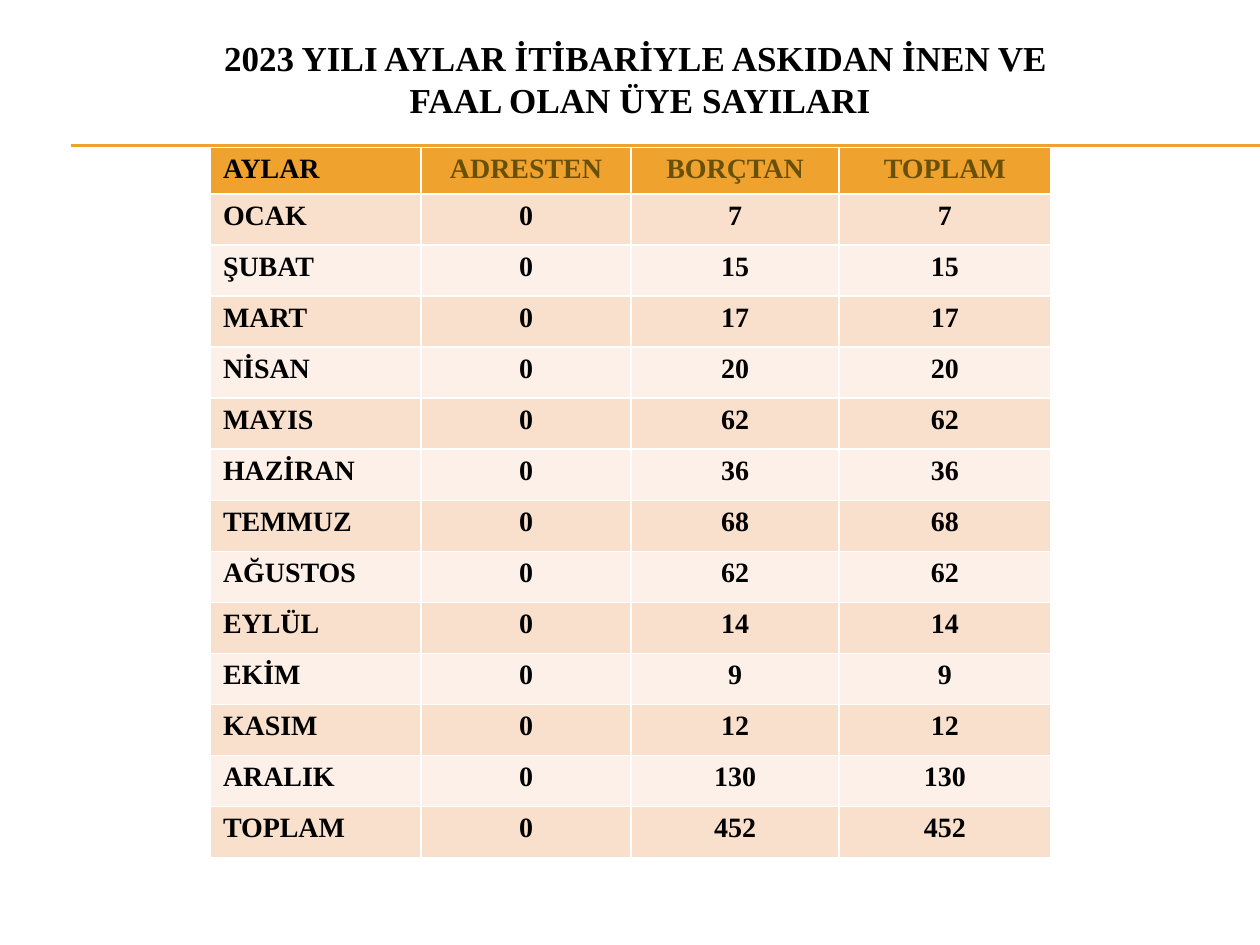
"""Build the 2023 slide of members returned to active status, month by month."""
import copy

import pptx
import pptx.dml.color
import pptx.enum.shapes
import pptx.enum.text
import pptx.oxml
import pptx.util

Inches = pptx.util.Inches
ALIGN = pptx.enum.text.PP_ALIGN
COLORS = {
    "accent": "F0A22E",
    "heading": "695008",
    "text": "000000",
    "dark_band": "F9E0CD",
    "light_band": "FCF0E8",
}


def rgb(name):
    return pptx.dml.color.RGBColor.from_string(COLORS[name])


def write(tf, text, size=16, color="text", align=ALIGN.CENTER):
    p = tf.paragraphs[0]
    p.text = text
    p.alignment = align
    for r in p.runs:
        r.font.name = "Times New Roman"
        r.font.size = pptx.util.Pt(size)
        r.font.bold = True
        r.font.color.rgb = rgb(color)
    for br in p._p.br_lst if hasattr(p._p, "br_lst") else p._p.findall(pptx.oxml.ns.qn("a:br")):
        br.append(copy.deepcopy(p.runs[0]._r.rPr))


prs = pptx.Presentation()
prs.slide_width, prs.slide_height = Inches(10), Inches(7.5)
s = prs.slides.add_slide(prs.slide_layouts[5])

for y in (1.15, 1.16):
    line = s.shapes.add_connector(
        pptx.enum.shapes.MSO_CONNECTOR.STRAIGHT,
        Inches(0.56), Inches(y), Inches(10), Inches(y))
    line.line.color.rgb = rgb("accent")
    line.line.width = pptx.util.Pt(0.75)
    line._element.spPr.append(pptx.oxml.parse_xml(
        '<a:effectLst xmlns:a="http://schemas.openxmlformats.org/drawingml/2006/main"/>'))

title = s.shapes.title
title.left, title.top = Inches(0.33), Inches(0.16)
title.width, title.height = Inches(9.5), Inches(0.92)
title.text_frame.vertical_anchor = pptx.enum.text.MSO_ANCHOR.MIDDLE
write(title.text_frame,
      "2023 YILI AYLAR İTİBARİYLE ASKIDAN İNEN VE \vFAAL OLAN ÜYE SAYILARI", size=20)

headings = ["AYLAR", "ADRESTEN", "BORÇTAN", "TOPLAM"]
members = [
    ("OCAK", 0, 7), ("ŞUBAT", 0, 15), ("MART", 0, 17), ("NİSAN", 0, 20),
    ("MAYIS", 0, 62), ("HAZİRAN", 0, 36), ("TEMMUZ", 0, 68), ("AĞUSTOS", 0, 62),
    ("EYLÜL", 0, 14), ("EKİM", 0, 9), ("KASIM", 0, 12), ("ARALIK", 0, 130),
]
members.append(("TOPLAM", sum(m[1] for m in members), sum(m[2] for m in members)))
rows = [headings] + [(month, address, debt, address + debt) for month, address, debt in members]

header_height, table_height = 0.37, 5.64
table = s.shapes.add_table(len(rows), len(headings), Inches(1.67), Inches(1.17),
                           Inches(6.67), Inches(table_height)).table
for column, width in zip(table.columns, (1.67, 1.67, 1.65, 1.68)):
    column.width = Inches(width)

for i, values in enumerate(rows):
    table.rows[i].height = Inches(
        (table_height - header_height) / len(members) if i else header_height)
    fill = "accent" if i == 0 else "dark_band" if i % 2 else "light_band"
    for j, value in enumerate(values):
        cell = table.cell(i, j)
        cell.fill.solid()
        cell.fill.fore_color.rgb = rgb(fill)
        write(cell.text_frame, str(value),
              color="heading" if i == 0 and j else "text",
              align=ALIGN.CENTER if j else ALIGN.LEFT)

prs.save("out.pptx")
